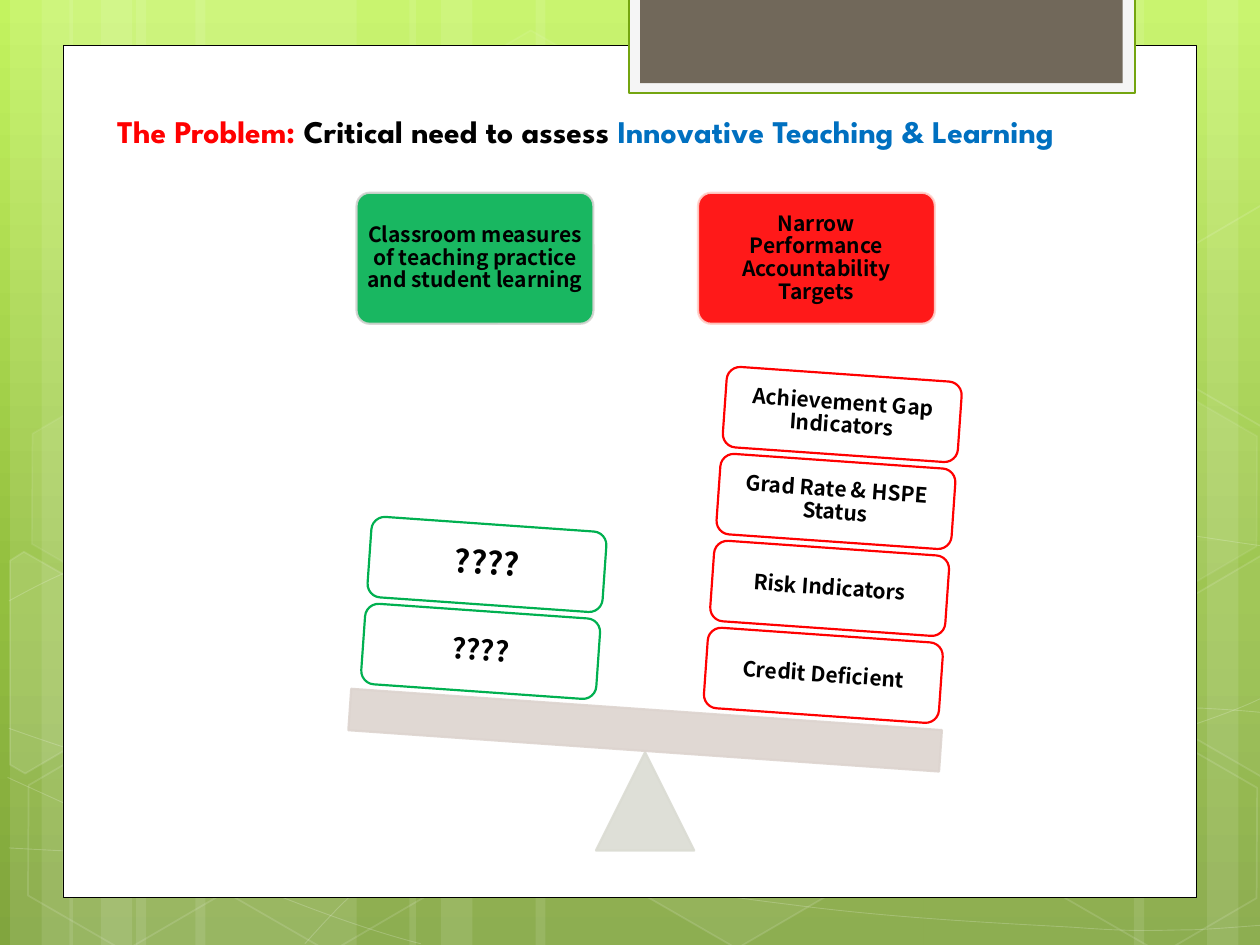
from copy import deepcopy
from lxml import etree
from pptx import Presentation
from pptx.dml.color import RGBColor
from pptx.enum.shapes import MSO_SHAPE
from pptx.enum.text import MSO_ANCHOR, PP_ALIGN
from pptx.oxml.ns import qn
from pptx.util import Inches, Pt

RECT, HEX = MSO_SHAPE.RECTANGLE, MSO_SHAPE.HEXAGON
ROUND, TRI = MSO_SHAPE.ROUNDED_RECTANGLE, MSO_SHAPE.ISOSCELES_TRIANGLE
MID, BOTTOM = MSO_ANCHOR.MIDDLE, MSO_ANCHOR.BOTTOM
CENTER, LEFT = PP_ALIGN.CENTER, PP_ALIGN.LEFT

HEAD, BODY = "League Spartan", "Noto Sans CJK KR"
COLORS = {
    "white": "FFFFFF", "black": "000000", "red": "FF0000", "green": "00B050",
    "blue": "0070C0", "tab": "F5F5F5", "rim": "74A510", "brown": "71685A",
    "grey": "D5D4D2", "pink": "FFD3CC", "beam": "DDD4CF", "base": "DBDCD3",
}
SKY = [(0, "C3F35F"), (0.62, "93BF3F"), (1, "81A53E")]

# Content
TITLE = [("The Problem: ", "red"), ("Critical need to assess ", "black"),
         ("Innovative Teaching & Learning", "blue")]
# header left, header text, fill, rim; stack left, bottom row top, (text, size) upwards
SIDES = [
    (2.83, "Classroom measures of teaching practice and student learning",
     "green", "grey", 2.88, 4.85, [("????", 16), ("????", 18)]),
    (5.54, "Narrow\vPerformance\vAccountability\vTargets",
     "red", "pink", 5.6, 5.04,
     [("Credit Deficient", 12), ("Risk Indicators", 12),
      ("Grad Rate & HSPE Status", 12), ("Achievement Gap Indicators", 12)]),
]
TILT, STEP, SHIFT = 4, 0.69, 0.05

# Backdrop: bars (left, width), curves (Bezier points), hexagons, cut hexagons
BARS = [(1.08, 1.75), (0.08, 0.5), (0.33, 0.83), (1.55, 1.75), (0.55, 0.5),
        (0.8, 0.83), (7.33, 1.75), (9.58, 0.5), (9, 0.83), (4.25, 3.08),
        (3.25, 0.5), (3.5, 0.83)]
CURVES = [
    [(0.07, 6.73), (0.61, 6.76), (1.15, 6.79), (1.9, 6.78), (2.65, 6.77),
     (3.58, 6.75), (4.58, 6.65), (5.58, 6.55), (7, 6.36), (7.92, 6.17),
     (8.83, 5.98), (9.77, 5.68), (10.07, 5.51)],
    [(0.07, 4.77), (0.36, 4.61), (0.65, 4.46), (1.21, 4.31), (1.78, 4.16),
     (2.59, 3.94), (3.47, 3.87), (4.36, 3.8), (5.44, 3.79), (6.54, 3.87),
     (7.64, 3.95), (9.47, 4.26), (10.07, 4.34)],
    [(0.06, 6.17), (1.27, 6.72), (2.47, 7.27), (3.34, 7.49)],
    [(0.07, 5.78), (0.38, 5.89), (0.7, 6), (1.28, 6.16), (1.86, 6.31),
     (2.73, 6.56), (3.57, 6.73), (4.4, 6.9), (5.45, 7.08), (6.28, 7.18),
     (7.11, 7.29), (8, 7.33), (8.53, 7.36), (9.05, 7.4), (9.19, 7.38),
     (9.45, 7.38), (9.71, 7.37), (9.89, 7.35), (10.07, 7.34)],
    [(2.42, 7.49), (2.6, 7.29), (2.78, 7.09), (3.02, 6.91), (3.26, 6.73),
     (3.6, 6.53), (3.88, 6.39), (4.16, 6.25), (4.33, 6.19), (4.7, 6.09),
     (5.06, 5.99), (5.73, 5.85), (6.08, 5.78), (6.44, 5.71), (6.49, 5.71),
     (6.8, 5.69), (7.11, 5.66), (7.6, 5.63), (7.94, 5.62), (8.29, 5.61),
     (8.86, 5.62), (8.86, 5.62), (9.1, 5.62), (9.3, 5.62), (9.53, 5.62),
     (9.71, 5.63), (9.88, 5.64), (10.06, 5.66)],
]
# left, top, fill alpha, line alpha
HEXES = [(3.34, 0.36, 4, 8), (4.97, 5.89, 6, 12), (0.11, 5.91, 0, 12),
         (0.14, 3.12, 7, 8), (1.74, 5.92, 0, 12), (7.53, 4.53, 10, 12),
         (8.34, 5.93, 0, 12), (8.34, 3.14, 7, 8)]
CUTS = [
    ([(0.08, 4.45), (0.19, 4.38), (0.96, 4.82), (0.95, 5.7), (0.2, 6.14),
      (0.08, 6.07)], 10),
    ([(9.26, 4.85), (10.01, 4.41), (10.09, 4.46), (10.09, 6.13),
      (10.02, 6.17), (9.26, 5.73)], 4),
    ([(9.26, 2.07), (10.01, 1.63), (10.1, 1.68), (10.09, 3.35),
      (10.02, 3.39), (9.26, 2.95)], 0),
]


def rgb(name):
    return RGBColor.from_string(COLORS[name])


def fade(node, alpha):
    if alpha < 100:
        etree.SubElement(node.find(qn("a:solidFill"))[0], qn("a:alpha"),
                         val=str(alpha * 1000))


def paint(shape, fill=None, line=None, width=1.25, alpha=100, edge=100):
    shape.shadow.inherit = False
    props = shape.element.spPr
    if fill and alpha:
        shape.fill.solid()
        shape.fill.fore_color.rgb = rgb(fill)
        fade(props, alpha)
    else:
        shape.fill.background()
    if line:
        shape.line.color.rgb = rgb(line)
        shape.line.width = Pt(width)
        fade(props.find(qn("a:ln")), edge)
    else:
        shape.line.fill.background()


def add(kind, box, turn=0, **look):
    shape = slide.shapes.add_shape(kind, *map(Inches, box))
    shape.rotation = turn
    paint(shape, **look)
    return shape


def trace(pts, close, **look):
    pts = [(Inches(x), Inches(y)) for x, y in pts]
    pen = slide.shapes.build_freeform(*pts[0])
    pen.add_line_segments(pts[1:], close=close)
    shape = pen.convert_to_shape()
    paint(shape, **look)
    return shape


def bend(shape):
    """Turn each three line segments into one Bezier segment."""
    route = shape.element.find(".//" + qn("a:path"))
    legs = route.findall(qn("a:lnTo"))
    for i in range(0, len(legs), 3):
        curve = etree.SubElement(route, qn("a:cubicBezTo"))
        for leg in legs[i:i + 3]:
            curve.append(leg[0])
            route.remove(leg)


def style(run, size, face, color):
    font = run.font
    font.size, font.name, font.bold = Pt(size), face, True
    font.color.rgb = rgb(color)


def label(shape, text, size):
    frame = shape.text_frame
    frame.word_wrap, frame.vertical_anchor = True, MID
    frame.margin_left = frame.margin_right = Inches(0.05)
    frame.margin_top = frame.margin_bottom = Inches(0.05)
    frame.text = text
    para = frame.paragraphs[0]
    para.alignment, para.line_spacing = CENTER, 0.9
    for run in para.runs:
        style(run, size, BODY, "black")


prs = Presentation()
prs.slide_width, prs.slide_height = Inches(10), Inches(7.5)
slide = prs.slides.add_slide(prs.slide_layouts[5])

# Background gradient
sky = slide.background.fill
sky.gradient()
sky.gradient_angle = 270
stops = slide.element.find(".//" + qn("a:gsLst"))
stops.append(deepcopy(stops[-1]))
for stop, (pos, tone) in zip(sky.gradient_stops, SKY):
    stop.position = pos
    stop.color.rgb = RGBColor.from_string(tone)

# Backdrop
for left, wide in BARS:
    add(RECT, (left, 0, wide, 7.5), fill="white", alpha=10)
for pts in CURVES:
    bend(trace(pts, False, line="white", width=0.5, edge=20))
for left, top, alpha, edge in HEXES:
    cell = add(HEX, (left, top, 1.75, 1.52), 30, fill="white", alpha=alpha,
               line="white", width=1, edge=edge)
    cell.adjustments[0] = 0.285
for pts, alpha in CUTS:
    trace(pts, True, fill="white", alpha=alpha, line="white", width=1, edge=12)

# Page panel and top tab
add(RECT, (0.5, 0.36, 9, 6.76), fill="white", line="black", width=0.5)
add(RECT, (4.99, -0.02, 4.02, 0.76), fill="tab", line="rim")
add(RECT, (5.08, -0.02, 3.83, 0.68), fill="brown")

# Title, raised above the panel
title = slide.shapes.title
title.element.getparent().append(title.element)
title.left, title.top, title.width, title.height = map(
    Inches, (0.83, 0.75, 9.75, 0.79))
frame = title.text_frame
frame.word_wrap, frame.vertical_anchor = True, BOTTOM
frame.margin_bottom = Inches(0.35)
para = frame.paragraphs[0]
para.alignment = LEFT
for text, color in TITLE:
    run = para.add_run()
    run.text = text
    style(run, 18, HEAD, color)

# Tilted scale
add(TRI, (4.73, 5.97, 0.78, 0.78), fill="base", line="base", alpha=90, edge=90)
add(RECT, (2.77, 5.63, 4.7, 0.33), TILT, fill="beam", line="beam",
    alpha=90, edge=90)

# Headers and their stacks
for left, text, color, rim, foot, top, items in SIDES:
    head = add(ROUND, (left, 1.53, 1.88, 1.04), fill=color, line=rim,
               alpha=90, edge=90)
    head.adjustments[0] = 0.1
    label(head, text, 12)
    for i, (item, size) in enumerate(items):
        block = add(ROUND, (foot + i * SHIFT, top - i * STEP, 1.87, 0.64),
                    TILT, line=color)
        label(block, item, size)

prs.save("out.pptx")
